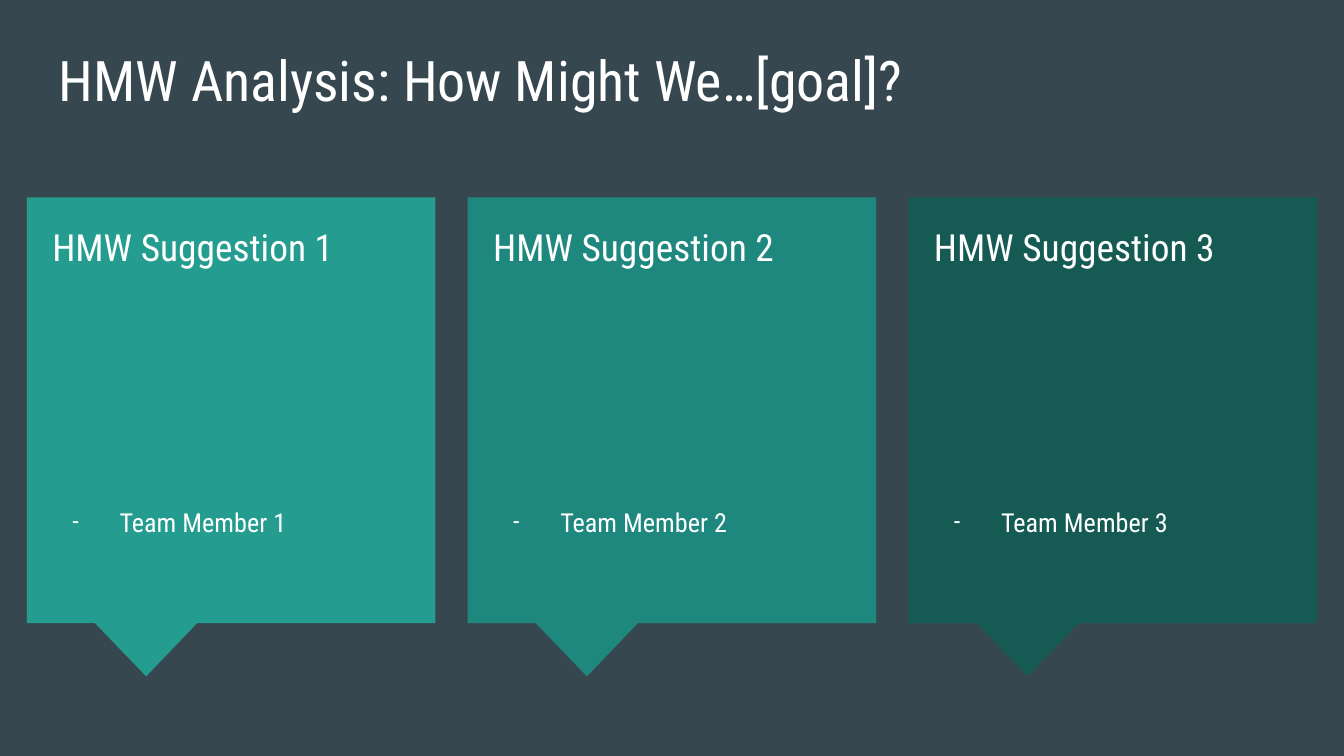
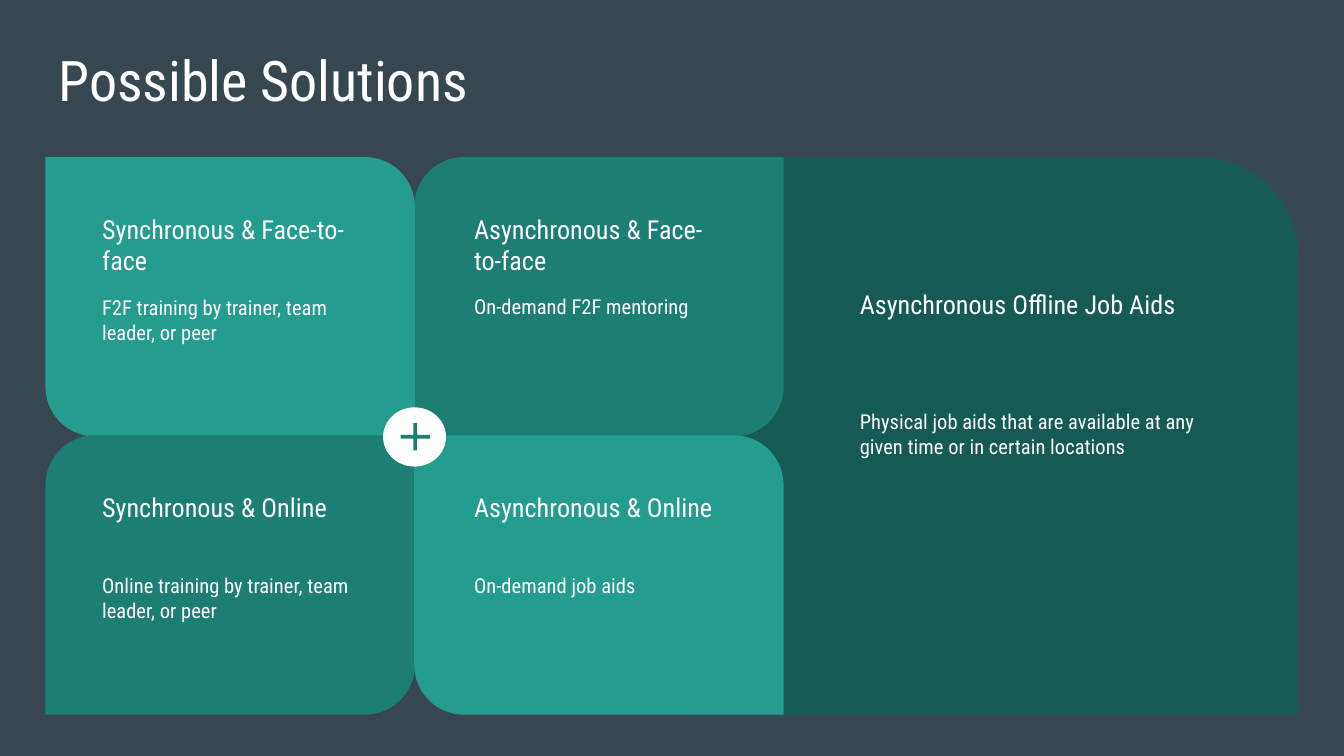
"""Build the two design workshop slides."""
from lxml.etree import SubElement
from pptx import Presentation
from pptx.dml.color import RGBColor
from pptx.enum.shapes import MSO_SHAPE
from pptx.oxml.ns import qn
from pptx.util import Cm, Pt

INK = {"back": "37474F", "text": "FFFFFF", "light": "249C90",
       "mid": "1F887E", "teal": "1D7E74", "dark": "155B54"}
FONT = "Roboto Condensed"


class Deck:
    def __init__(self):
        self.prs = Presentation()
        self.prs.slide_width, self.prs.slide_height = Cm(25.4), Cm(14.29)
        self.slide = None

    def page(self, title):
        self.slide = self.prs.slides.add_slide(self.prs.slide_layouts[6])
        fill = self.slide.background.fill
        fill.solid()
        fill.fore_color.rgb = RGBColor.from_string(INK["back"])
        self.text(title, (0.86, 0.61, 23.67, 1.6), 30)

    def shape(self, kind, box, ink, adjust=()):
        item = self.slide.shapes.add_shape(kind, *map(Cm, box))
        item.shadow.inherit = False
        item.fill.solid()
        item.fill.fore_color.rgb = RGBColor.from_string(INK[ink])
        item.line.fill.background()
        for spot, value in enumerate(adjust):
            item.adjustments[spot] = value

    def text(self, words, box, size, after=0):
        frame = self.slide.shapes.add_textbox(*map(Cm, box)).text_frame
        frame.word_wrap = True
        frame.margin_left = frame.margin_right = Cm(0.25)
        frame.margin_top = frame.margin_bottom = Cm(0.25)
        frame.text = words
        self.style(frame.paragraphs[0], size)
        frame.paragraphs[0].space_after = Pt(after)
        return frame

    def style(self, para, size):
        for run in para.runs:
            run.font.name = FONT
            run.font.size = Pt(size)
            run.font.color.rgb = RGBColor.from_string(INK["text"])

    def bullet(self, frame, words, size, before):
        para = frame.add_paragraph()
        para.text = words
        self.style(para, size)
        para.space_before = Pt(before)
        props = para._p.get_or_add_pPr()
        props.set("marL", str(Cm(1.27)))
        props.set("indent", str(Cm(-0.89)))
        tint = SubElement(props, qn("a:buClr"))
        SubElement(tint, qn("a:srgbClr"), val=INK["text"])
        SubElement(props, qn("a:buFont"), typeface=FONT)
        SubElement(props, qn("a:buChar"), char="-")

    def card(self, num, ink):
        left = 0.51 + 8.33 * (num - 1)
        self.shape(MSO_SHAPE.RECTANGULAR_CALLOUT, (left, 3.73, 7.72, 8.05),
                   ink, (-0.208, 0.625))
        frame = self.text(f"HMW Suggestion {num}",
                          (left + 0.23, 3.99, 7.29, 7.32), 20)
        self.bullet(frame, f"Team Member {num}", 14, 127)

    def panel(self, box, ink, curve, head, head_box, body, body_box):
        self.shape(MSO_SHAPE.ROUND_2_DIAG_RECTANGLE, box, ink, curve)
        self.text(head, head_box, 14)
        self.text(body, body_box, 11, after=10)

    def tile(self, row, col, head, body):
        top, left = 5.26 * row, 1.68 + 7.03 * col
        same = row == col
        self.panel((0.86 + 6.97 * col, 2.97 + top, 6.98, 5.28),
                   "light" if same else "teal",
                   (0, 0.178) if same else (0.178, 0),
                   head, (left, 3.78 + top, 5.21, 1.55),
                   body, (left, 5.33 + top, 5.21, 1.73))


def main():
    deck = Deck()
    deck.page("HMW Analysis: How Might We…[goal]?")
    for num, ink in enumerate(("light", "mid", "dark"), 1):
        deck.card(num, ink)

    deck.page("Possible Solutions")
    deck.panel((11.33, 2.97, 13.21, 10.54), "dark", (0, 0.178),
               "Asynchronous Offline Job Aids", (16, 5.21, 7.26, 2.03),
               "Physical job aids that are available at any given time "
               "or in certain locations", (16, 7.49, 7.26, 3.78))
    tiles = (
        (0, 1, "Asynchronous & Face-to-face", "On-demand F2F mentoring"),
        (0, 0, "Synchronous & Face-to-face",
         "F2F training by trainer, team leader, or peer"),
        (1, 0, "Synchronous & Online",
         "Online training by trainer, team leader, or peer"),
        (1, 1, "Asynchronous & Online", "On-demand job aids"),
    )
    for tile in tiles:
        deck.tile(*tile)
    deck.shape(MSO_SHAPE.OVAL, (7.24, 7.7, 1.19, 1.12), "text")
    deck.shape(MSO_SHAPE.MATH_PLUS, (7.47, 7.9, 0.76, 0.71), "teal", (0.099,))
    deck.prs.save("out.pptx")


if __name__ == "__main__":
    main()
